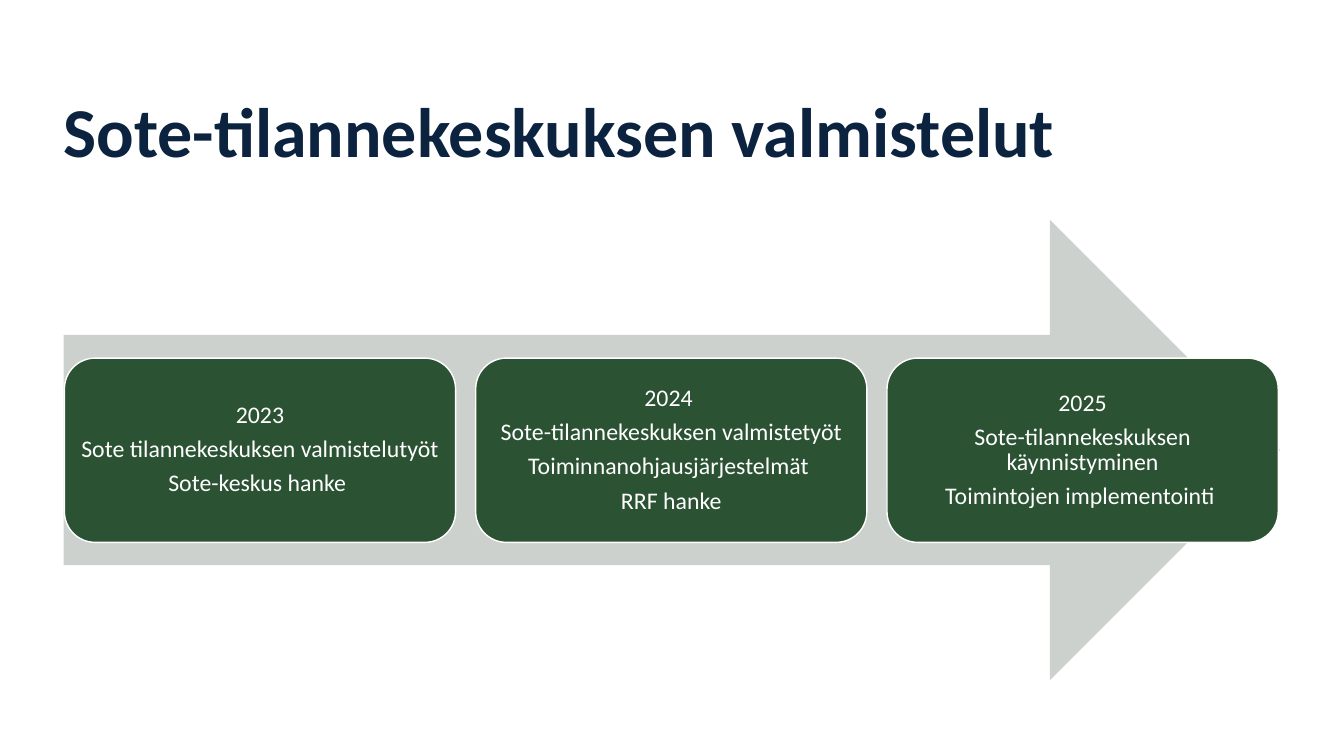
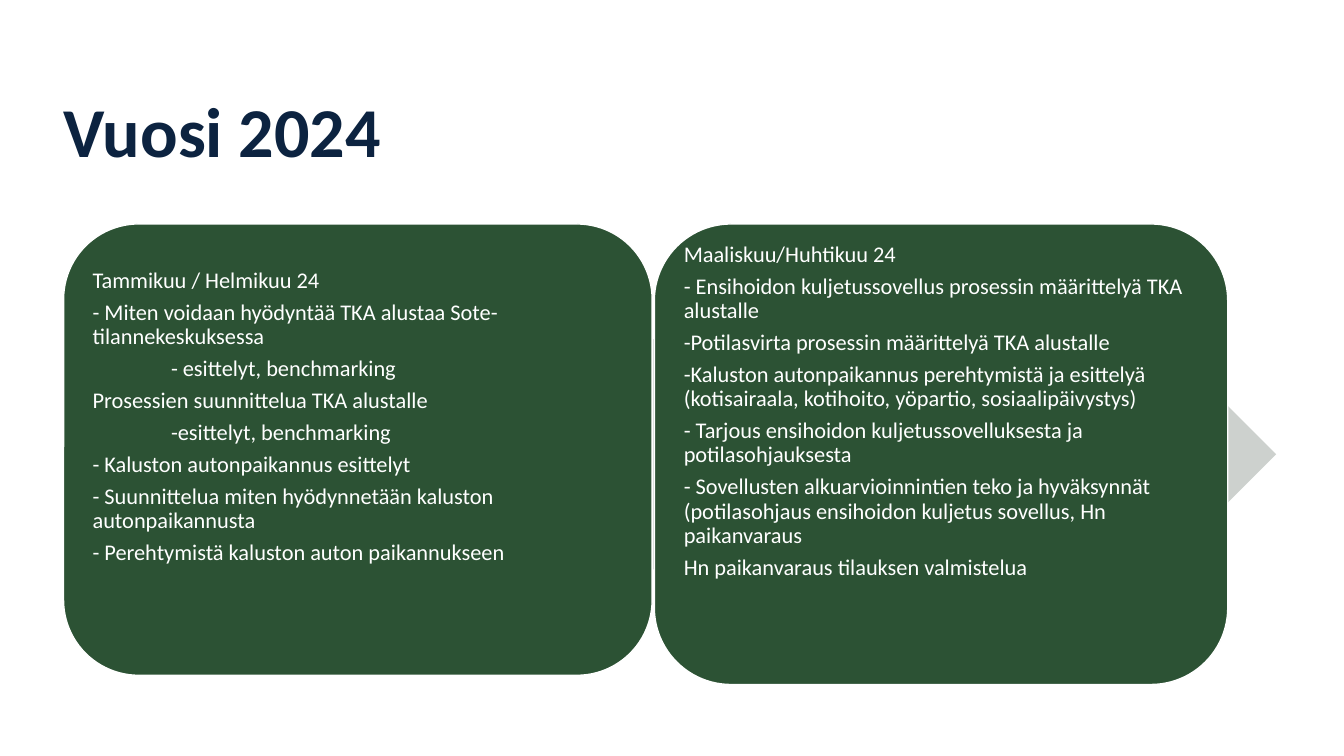
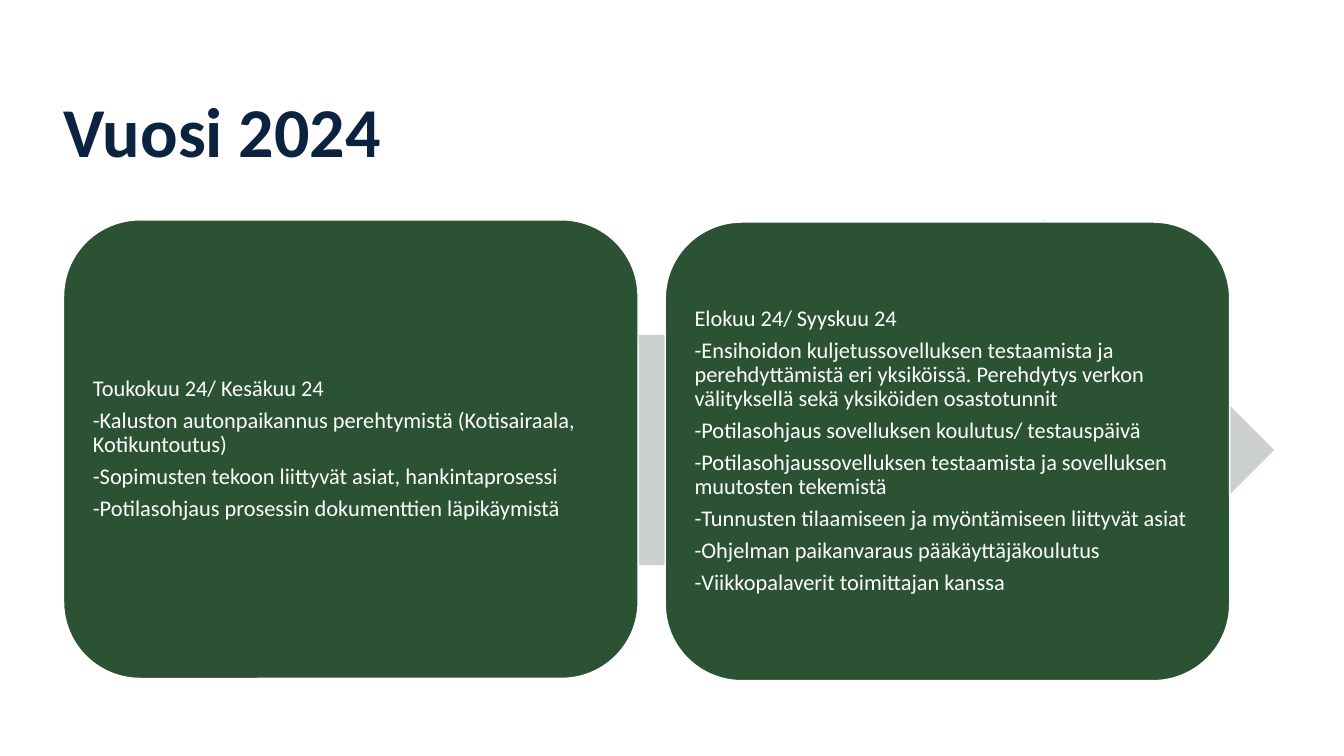
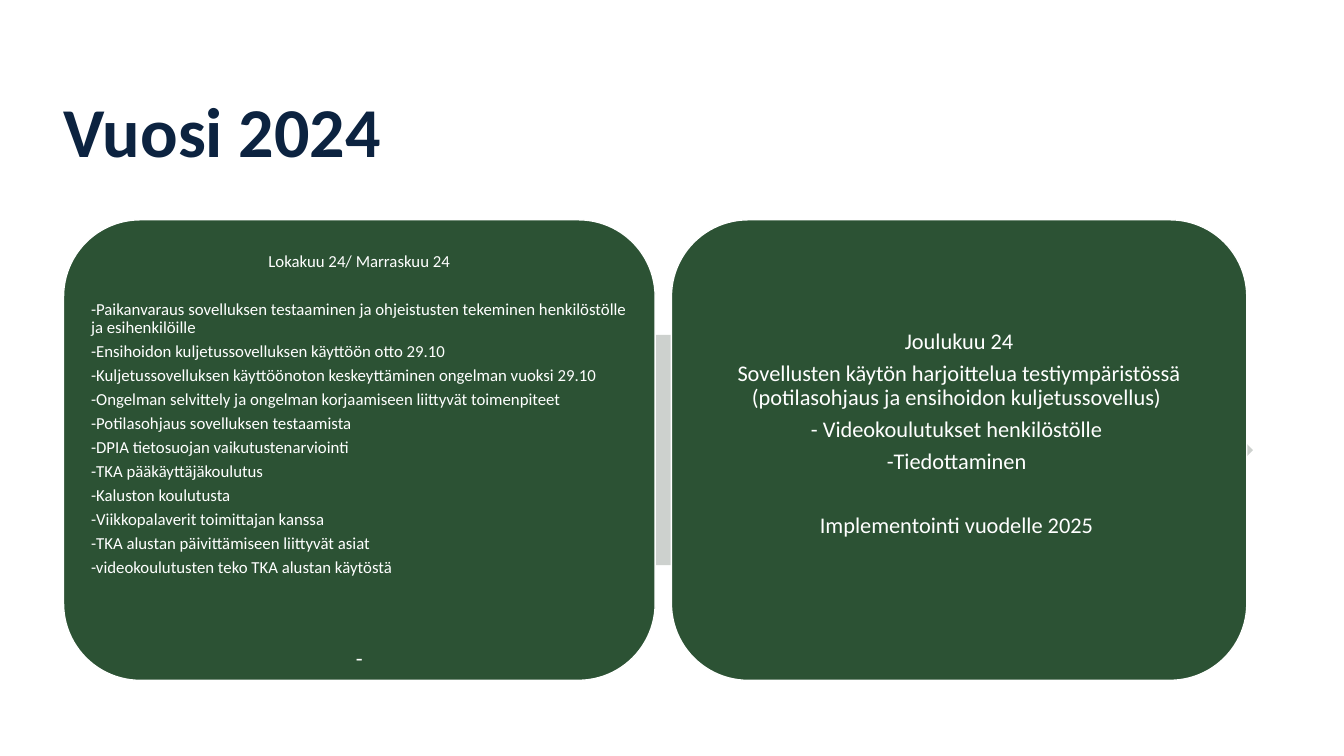
from pptx import Presentation
from pptx.dml.color import RGBColor
from pptx.enum.shapes import MSO_SHAPE
from pptx.enum.text import MSO_ANCHOR, MSO_AUTO_SIZE, PP_ALIGN
from pptx.util import Pt

# Shared style
FONT = "Calibri"
NAVY, GREEN, GREY, WHITE = "0C2340", "2C5234", "CDD1CE", "FFFFFF"
TITLE_FRAME = (45.4, 74.2, 768, 76.3)
LEFT, CENTER = PP_ALIGN.LEFT, PP_ALIGN.CENTER

# Content: a line is a text, or a text with its own format
YEARS = [
    ["2023", "Sote tilannekeskuksen valmistelutyöt ", "Sote-keskus hanke "],
    ["2024 ", "Sote-tilannekeskuksen valmistetyöt",
     "Toiminnanohjausjärjestelmät ", "RRF hanke"],
    ["2025", "Sote-tilannekeskuksen käynnistyminen", "Toimintojen implementointi "],
]
JANUARY = [
    "Tammikuu / Helmikuu 24",
    "- Miten voidaan hyödyntää TKA alustaa Sote-tilannekeskuksessa",
    ("- esittelyt, benchmarking", {"indent": 56}),
    "Prosessien suunnittelua TKA alustalle",
    ("-esittelyt, benchmarking", {"indent": 56}),
    "- Kaluston autonpaikannus esittelyt",
    "- Suunnittelua miten hyödynnetään kaluston autonpaikannusta",
    "- Perehtymistä kaluston auton paikannukseen",
]
MARCH = [
    "Maaliskuu/Huhtikuu 24",
    "- Ensihoidon kuljetussovellus prosessin määrittelyä TKA alustalle",
    "-Potilasvirta prosessin määrittelyä TKA alustalle",
    "-Kaluston autonpaikannus perehtymistä ja esittelyä "
    "(kotisairaala, kotihoito, yöpartio, sosiaalipäivystys)",
    "- Tarjous ensihoidon kuljetussovelluksesta ja potilasohjauksesta",
    "- Sovellusten alkuarvioinnintien teko ja hyväksynnät "
    "(potilasohjaus ensihoidon kuljetus sovellus, Hn paikanvaraus",
    "Hn paikanvaraus tilauksen valmistelua",
]
MAY = [
    "Toukokuu 24/ Kesäkuu 24",
    "-Kaluston autonpaikannus perehtymistä (Kotisairaala, Kotikuntoutus)",
    "-Sopimusten tekoon liittyvät asiat, hankintaprosessi",
    "-Potilasohjaus prosessin dokumenttien läpikäymistä",
]
AUGUST = [
    "Elokuu 24/ Syyskuu 24",
    "-Ensihoidon kuljetussovelluksen testaamista ja perehdyttämistä eri yksiköissä. "
    "Perehdytys verkon välityksellä sekä yksiköiden osastotunnit",
    "-Potilasohjaus sovelluksen koulutus/ testauspäivä",
    "-Potilasohjaussovelluksen testaamista ja sovelluksen muutosten tekemistä",
    "-Tunnusten tilaamiseen ja myöntämiseen liittyvät asiat",
    "-Ohjelman paikanvaraus pääkäyttäjäkoulutus",
    "-Viikkopalaverit toimittajan kanssa",
]
OCTOBER = [
    ("Lokakuu 24/ Marraskuu 24", {"align": CENTER, "after": 21.5}),
    "-Paikanvaraus sovelluksen testaaminen ja ohjeistusten tekeminen "
    "henkilöstölle ja esihenkilöille",
    "-Ensihoidon kuljetussovelluksen käyttöön otto 29.10",
    "-Kuljetussovelluksen käyttöönoton keskeyttäminen ongelman vuoksi 29.10",
    "-Ongelman selvittely ja ongelman korjaamiseen liittyvät toimenpiteet",
    "-Potilasohjaus sovelluksen testaamista",
    "-DPIA tietosuojan vaikutustenarviointi",
    "-TKA pääkäyttäjäkoulutus",
    "-Kaluston koulutusta",
    "-Viikkopalaverit toimittajan kanssa",
    "-TKA alustan päivittämiseen liittyvät asiat",
    ("-videokoulutusten teko TKA alustan käytöstä", {"after": 50}),
    ("-", {"align": CENTER, "size": 16}),
]
DECEMBER = [
    "Joulukuu 24",
    "Sovellusten käytön harjoittelua testiympäristössä "
    "(potilasohjaus ja ensihoidon kuljetussovellus) ",
    "- Videokoulutukset henkilöstölle ",
    ("-Tiedottaminen ", {"after": 28.5}),
    "Implementointi vuodelle 2025 ",
]

# Slides: title, arrow frame, cards (frame, lines, format)
CARD_LEFT, CARD_STEP = 46, 293.8
SLIDES = [
    ("Sote-tilannekeskuksen valmistelut", (45.4, 157, 869, 329),
     [((CARD_LEFT + i * CARD_STEP, 255.8, 279.4, 131.6), lines,
       {"size": 17, "align": CENTER}) for i, lines in enumerate(YEARS)]),
    ("Vuosi 2024", (48.2, 160, 863.3, 329),
     [((45.4, 160, 420.4, 322.4), JANUARY, {"bottom": 51}),
      ((467.4, 160, 409.6, 329), MARCH, {"bottom": 66})]),
    ("Vuosi 2024", (171.4, 157, 738.7, 329),
     [((45.4, 157, 410.4, 327.6), MAY, {}),
      ((475.2, 158.6, 403.2, 327.6), AUGUST, {})]),
    ("Vuosi 2024", (52.6, 157, 842.4, 329),
     [((45.4, 157, 422.6, 329), OCTOBER, {"size": 12, "inset": 3.6, "top": 20.8}),
      ((479.6, 157, 411, 329), DECEMBER, {"align": CENTER, "bottom": 28})]),
]


def color(value):
    return RGBColor.from_string(value)


def place(shape, frame):
    shape.left, shape.top, shape.width, shape.height = map(Pt, frame)


def write(box, lines, size=16, ink=WHITE, bold=False, align=LEFT, spacing=0.9,
          anchor=MSO_ANCHOR.MIDDLE, inset=5, top=None, bottom=None):
    """Fill a shape with paragraphs; a line may override size, align, after, indent."""
    frame = box.text_frame
    frame.word_wrap = True
    frame.auto_size = MSO_AUTO_SIZE.NONE
    frame.vertical_anchor = anchor
    frame.margin_left = frame.margin_right = Pt(inset)
    frame.margin_top = Pt(inset if top is None else top)
    frame.margin_bottom = Pt(inset if bottom is None else bottom)
    for number, line in enumerate(lines):
        text, own = (line, {}) if isinstance(line, str) else line
        para = frame.add_paragraph() if number else frame.paragraphs[0]
        points = own.get("size", size)
        para.alignment = own.get("align", align)
        para.line_spacing = spacing
        para.space_before = Pt(0)
        para.space_after = Pt(own.get("after", round(0.35 * points, 2)))
        if "indent" in own:
            properties = para._p.get_or_add_pPr()
            properties.set("marL", str(Pt(own["indent"])))
            properties.set("indent", "0")
        span = para.add_run()
        span.text = text
        span.font.name, span.font.size, span.font.bold = FONT, Pt(points), bold
        span.font.color.rgb = color(ink)


def add_panel(page, kind, frame, fill, outline=None):
    panel = page.shapes.add_shape(kind, *map(Pt, frame))
    panel.shadow.inherit = False
    panel.fill.solid()
    panel.fill.fore_color.rgb = color(fill)
    if outline:
        panel.line.color.rgb = color(outline)
        panel.line.width = Pt(1)
    else:
        panel.line.fill.background()
    return panel


def main():
    deck = Presentation()
    deck.slide_width, deck.slide_height = Pt(960), Pt(540)
    layout = deck.slide_layouts[5]
    place(layout.placeholders[0], TITLE_FRAME)

    for title, arrow, cards in SLIDES:
        page = deck.slides.add_slide(layout)
        write(page.shapes.title, [title], size=50, ink=NAVY, bold=True,
              spacing=0.8, anchor=MSO_ANCHOR.TOP, inset=0)
        add_panel(page, MSO_SHAPE.RIGHT_ARROW, arrow, GREY)
        for frame, lines, style in cards:
            card = add_panel(page, MSO_SHAPE.ROUNDED_RECTANGLE, frame, GREEN, WHITE)
            write(card, lines, **style)

    deck.save("out.pptx")


if __name__ == "__main__":
    main()
